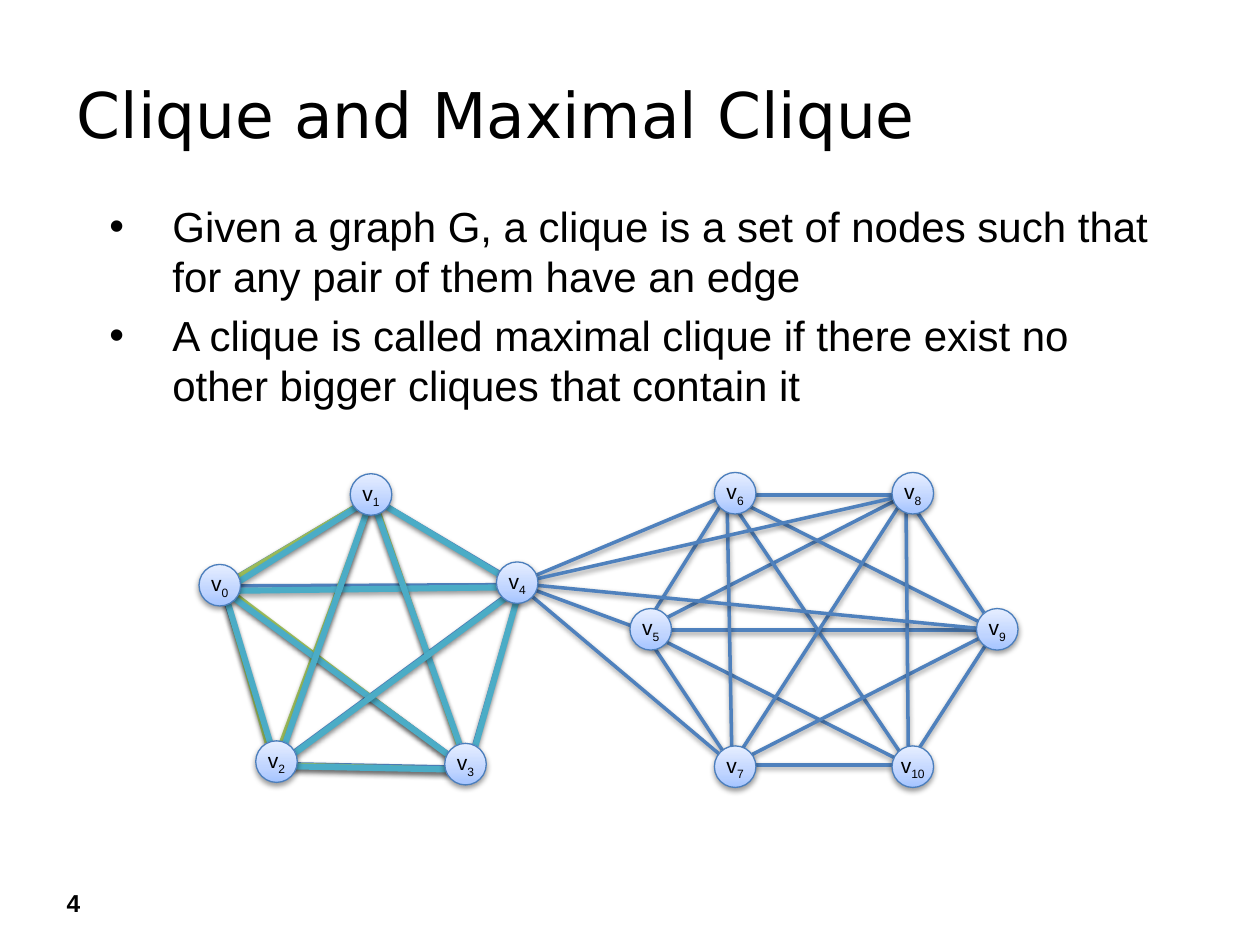
from copy import deepcopy
from dataclasses import dataclass
from itertools import combinations

from pptx import Presentation
from pptx.dml.color import RGBColor
from pptx.enum.shapes import MSO_CONNECTOR, MSO_SHAPE
from pptx.enum.text import MSO_ANCHOR, PP_ALIGN
from pptx.oxml import parse_xml
from pptx.oxml.ns import nsdecls, qn
from pptx.util import Inches, Pt


@dataclass(frozen=True)
class Theme:
    text: str = "000000"
    blue: str = "4F81BD"
    green: str = "9BBB59"
    teal: str = "4BACC6"
    node_line: str = "4B7EBC"
    node_fill: tuple = ((0, "A4C4FF"), (0.35, "BFD4FF"), (1, "E6EEFF"))
    heading_font: str = "DejaVu Sans"
    body_font: str = "Arial"
    title_size: int = 36
    body_size: int = 24
    number_size: int = 14
    node_size: int = 12


@dataclass(frozen=True)
class Node:
    label: int
    left: float
    top: float


@dataclass(frozen=True)
class EdgeLayer:
    anchors: dict  # node label -> point where its edges meet
    pairs: list
    color: str
    width: float
    shadow_alpha: int = 38
    shadow_dist: float = 1.6


T = Theme()
NODE_D = 0.33
BULLETS = (
    "Given a graph G, a clique is a set of nodes such that for any pair of them have an edge",
    "A clique is called maximal clique if there exist no other bigger cliques that contain it",
)
NODES = (
    Node(0, 1.58, 4.48), Node(1, 2.78, 3.76), Node(2, 2.03, 5.88),
    Node(3, 3.53, 5.9), Node(4, 3.94, 4.46), Node(5, 5, 4.83),
    Node(6, 5.67, 3.75), Node(7, 5.67, 5.92), Node(8, 7.08, 3.75),
    Node(9, 7.75, 4.83), Node(10, 7.08, 5.92),
)


def clique(*labels: int) -> list:
    return list(combinations(labels, 2))


LAYERS = (
    # Right clique, and the links from v4 into it
    EdgeLayer({4: (4.1, 4.63), 5: (5.1, 5), 6: (5.77, 3.93), 7: (5.81, 6.07),
               8: (7.19, 3.93), 9: (7.9, 5), 10: (7.21, 6.07)},
              clique(5, 6, 7, 8, 9, 10) + [(4, n) for n in range(5, 10)], T.blue, 2),
    # Left graph, its smaller clique, and its maximal clique on top
    EdgeLayer({0: (1.75, 4.65), 1: (2.95, 3.94), 2: (2.2, 6.06),
               3: (3.71, 6.09), 4: (4.13, 4.64)},
              clique(0, 1, 2, 3, 4), T.blue, 2),
    EdgeLayer({0: (1.77, 4.65), 1: (2.96, 3.94), 2: (2.17, 6.07), 3: (3.71, 6.11)},
              clique(0, 1, 2, 3), T.green, 3, 35, 1.8),
    EdgeLayer({0: (1.78, 4.69), 1: (2.95, 3.95), 2: (2.2, 6.08),
               3: (3.72, 6.11), 4: (4.13, 4.66)},
              clique(0, 1, 2, 3, 4), T.teal, 3.5, 35, 1.8),
)


def add_run(p, text: str, *, size: float, font: str = T.body_font,
            bold: bool = False, baseline: int = 0) -> None:
    r = p.add_run()
    r.text = text
    r.font.size, r.font.name, r.font.bold = Pt(size), font, bold
    r.font.color.rgb = RGBColor.from_string(T.text)
    if baseline:
        r.font._element.set("baseline", str(baseline * 1000))


def add_text(s, box: tuple, *paragraphs: str, margin: float = 0.3, indent: float = 0,
             bullet: bool = False, top_inset: float = 0.09, **fmt) -> None:
    tf = s.shapes.add_textbox(*map(Inches, box)).text_frame
    tf.word_wrap = True
    tf.margin_top = Inches(top_inset)
    for i, text in enumerate(paragraphs):
        p = tf.add_paragraph() if i else tf.paragraphs[0]
        pPr = p._p.get_or_add_pPr()
        pPr.set("marL", str(Inches(margin)))
        pPr.set("indent", str(Inches(indent)))
        if bullet:
            pPr.append(parse_xml(f'<a:buFont {nsdecls("a")} typeface="Arial"/>'))
            pPr.append(parse_xml(f'<a:buChar {nsdecls("a")} char="•"/>'))
        if i:
            p.space_before = Pt(fmt["size"] * 0.2)
        add_run(p, text, **fmt)


def add_shadow(sp, alpha: int = 38, dist: float = 1.6) -> None:
    sp._element.spPr.append(parse_xml(
        f'<a:effectLst {nsdecls("a")}><a:outerShdw blurRad="{Pt(3.1)}" '
        f'dist="{Pt(dist)}" dir="5400000" rotWithShape="0"><a:srgbClr val="000000">'
        f'<a:alpha val="{alpha * 1000}"/></a:srgbClr></a:outerShdw></a:effectLst>'))


def add_edges(s, layer: EdgeLayer) -> None:
    for a, b in layer.pairs:
        ends = map(Inches, layer.anchors[a] + layer.anchors[b])
        line = s.shapes.add_connector(MSO_CONNECTOR.STRAIGHT, *ends)
        line.line.color.rgb = RGBColor.from_string(layer.color)
        line.line.width = Pt(layer.width)
        add_shadow(line, layer.shadow_alpha, layer.shadow_dist)


def add_node(s, node: Node) -> None:
    sp = s.shapes.add_shape(MSO_SHAPE.FLOWCHART_CONNECTOR, Inches(node.left),
                            Inches(node.top), Inches(NODE_D), Inches(NODE_D))
    sp.fill.gradient()
    sp.fill.gradient_angle = 90
    gs_lst = sp._element.spPr.find(".//" + qn("a:gsLst"))
    gs_lst.append(deepcopy(gs_lst[0]))
    for stop, (position, color) in zip(sp.fill.gradient_stops, T.node_fill):
        stop.position = position
        stop.color.rgb = RGBColor.from_string(color)
    sp.line.color.rgb = RGBColor.from_string(T.node_line)
    sp.line.width = Pt(0.75)
    add_shadow(sp)
    tf = sp.text_frame
    tf.margin_left = tf.margin_right = tf.margin_top = tf.margin_bottom = 0
    tf.vertical_anchor = MSO_ANCHOR.MIDDLE
    p = tf.paragraphs[0]
    p.alignment = PP_ALIGN.CENTER
    add_run(p, "v", size=T.node_size)
    add_run(p, str(node.label), size=T.node_size, baseline=-25)


def main() -> None:
    prs = Presentation()
    prs.slide_width, prs.slide_height = Inches(10), Inches(7.5)
    s = prs.slides.add_slide(prs.slide_layouts[6])

    # Slide number, title and definitions
    add_text(s, (0.43, 6.98, 0.47, 0.34), "4", margin=0, top_inset=0.07,
             size=T.number_size, bold=True)
    add_text(s, (0.51, 0.51, 9, 0.87), "Clique and Maximal Clique", margin=0,
             size=T.title_size, font=T.heading_font)
    add_text(s, (0.33, 1.5, 9, 1.91), *BULLETS, margin=0.94, indent=-0.5,
             bullet=True, size=T.body_size)

    # Graph: edges first, nodes on top
    for layer in LAYERS:
        add_edges(s, layer)
    for node in NODES:
        add_node(s, node)

    prs.save("out.pptx")


if __name__ == "__main__":
    main()
